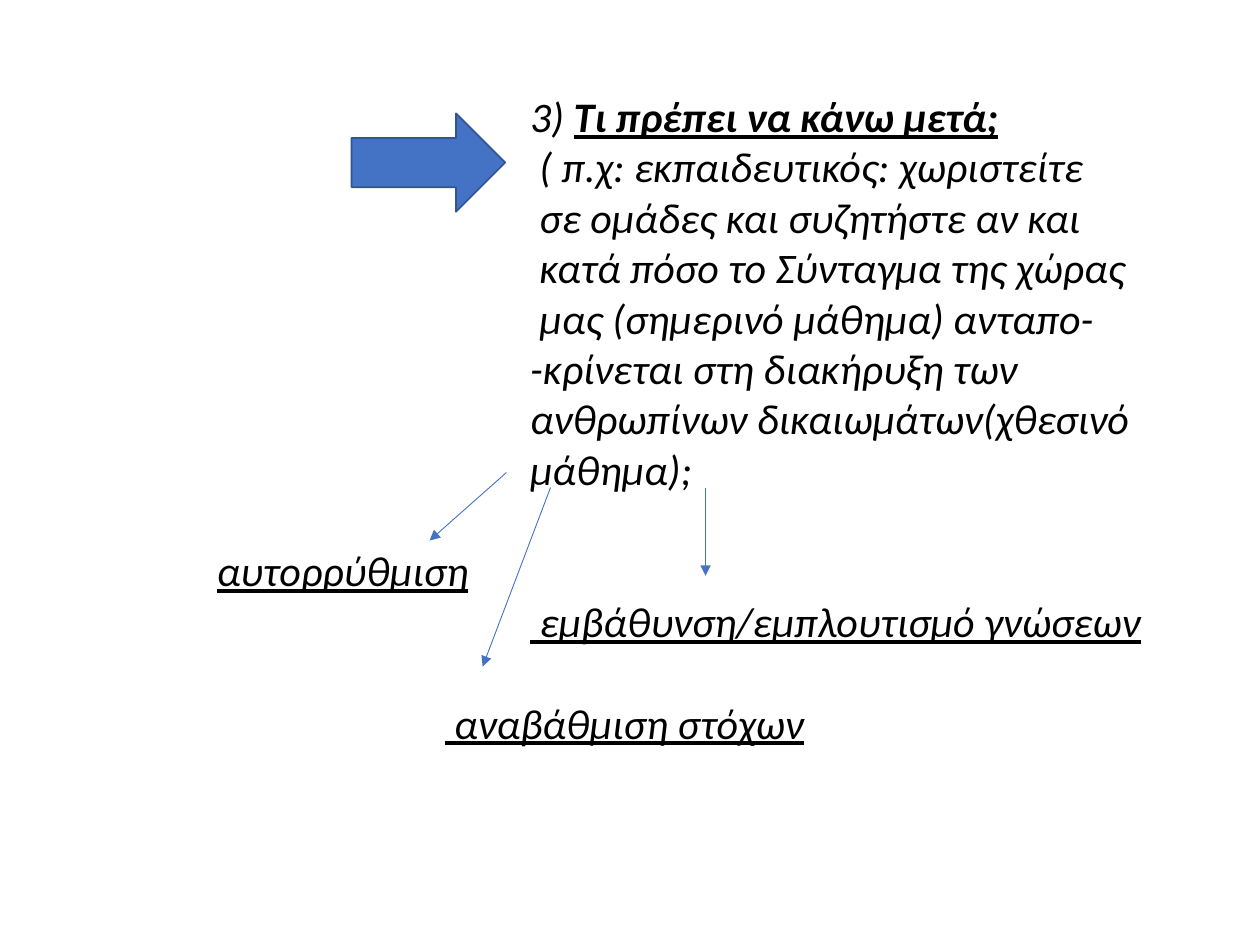
from lxml import etree
from pptx import Presentation
from pptx.dml.color import RGBColor
from pptx.enum.shapes import MSO_CONNECTOR, MSO_SHAPE
from pptx.enum.text import MSO_ANCHOR
from pptx.oxml.ns import qn
from pptx.util import Pt

STRAIGHT = MSO_CONNECTOR.STRAIGHT
RIGHT_ARROW = MSO_SHAPE.RIGHT_ARROW
TOP = MSO_ANCHOR.TOP

COLORS = {"text": "000000", "accent": "4472C4", "outline": "325491"}
FONT = "Calibri"
FONT_SIZE = 24
LINE_HEIGHT = 29.3
QUESTION_INDENT = 222.4
EXAMPLE_INDENT = 227.8
REGULATION_INDENT = 43.4
GOALS_INDENT = 173.6

QUESTION = [("3) ", False, False), ("Τι πρέπει να κάνω μετά;", True, True)]
EXAMPLE_LINES = [
    "( π.χ: εκπαιδευτικός: χωριστείτε",
    "σε ομάδες και συζητήστε αν και",
    "κατά πόσο το Σύνταγμα της χώρας",
    "μας (σημερινό μάθημα) ανταπο-",
]
CLOSING_LINES = [
    "-κρίνεται στη διακήρυξη των",
    "ανθρωπίνων δικαιωμάτων(χθεσινό",
    "μάθημα);",
]
OUTCOMES = [
    ("αυτορρύθμιση", REGULATION_INDENT, LINE_HEIGHT),
    (" εμβάθυνση/εμπλουτισμό γνώσεων", QUESTION_INDENT, 0),
    (" αναβάθμιση στόχων", GOALS_INDENT, LINE_HEIGHT),
]
OUTCOME_ARROWS = [
    (289.4, 270, 245.5, 308.9),
    (403.2, 278.6, 403.2, 329),
    (314.6, 278.6, 275.8, 380.9),
]


def color(name):
    return RGBColor.from_string(COLORS[name])


def add_run(paragraph, text, bold=False, underline=False):
    run = paragraph.add_run()
    run.text = text
    font = run.font
    font.name = FONT
    font.size = Pt(FONT_SIZE)
    font.italic = True
    font.bold = bold
    font.underline = underline
    font.color.rgb = color("text")


def add_paragraph(frame, runs, indent, space_before=0):
    first = frame.paragraphs[0]
    paragraph = frame.add_paragraph() if first.runs else first
    paragraph.space_before = Pt(space_before)
    properties = paragraph._p.get_or_add_pPr()
    properties.set("marL", str(Pt(indent)))
    properties.set("indent", "0")
    for run in runs:
        add_run(paragraph, *run)


def add_body(slide):
    box = slide.shapes.add_textbox(Pt(73.4), Pt(48.2), Pt(589.7), Pt(414.7))
    frame = box.text_frame
    frame.word_wrap = True
    frame.vertical_anchor = TOP
    add_paragraph(frame, QUESTION, QUESTION_INDENT)
    for text in EXAMPLE_LINES:
        add_paragraph(frame, [(text,)], EXAMPLE_INDENT)
    for text in CLOSING_LINES:
        add_paragraph(frame, [(text,)], QUESTION_INDENT)
    for text, indent, space_before in OUTCOMES:
        add_paragraph(frame, [(text, False, True)], indent, space_before)


def add_outcome_arrow(slide, *ends):
    connector = slide.shapes.add_connector(STRAIGHT, *map(Pt, ends))
    connector.line.color.rgb = color("accent")
    connector.line.width = Pt(0.5)
    line = connector.line._get_or_add_ln()
    etree.SubElement(line, qn("a:tailEnd"), type="triangle")
    etree.SubElement(connector._element.spPr, qn("a:effectLst"))


def add_block_arrow(slide):
    arrow = slide.shapes.add_shape(
        RIGHT_ARROW, Pt(200.9), Pt(64.8), Pt(87.8), Pt(56.2)
    )
    arrow.shadow.inherit = False
    arrow.fill.solid()
    arrow.fill.fore_color.rgb = color("accent")
    arrow.line.color.rgb = color("outline")
    arrow.line.width = Pt(1)


def main():
    presentation = Presentation()
    presentation.slide_width = Pt(720)
    presentation.slide_height = Pt(540)
    slide = presentation.slides.add_slide(presentation.slide_layouts[6])
    add_body(slide)
    for ends in OUTCOME_ARROWS:
        add_outcome_arrow(slide, *ends)
    add_block_arrow(slide)
    presentation.save("out.pptx")


if __name__ == "__main__":
    main()
